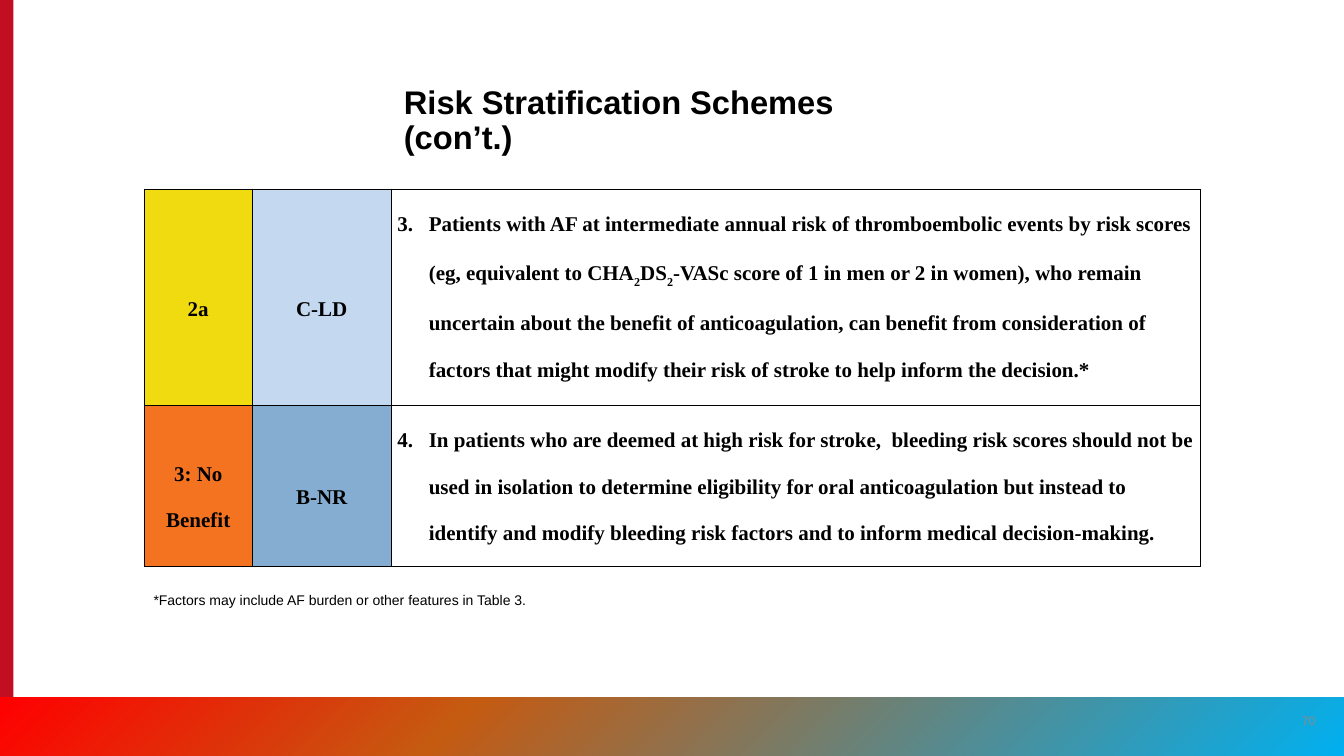
from copy import deepcopy

from pptx import Presentation
from pptx.dml.color import RGBColor
from pptx.enum.shapes import MSO_SHAPE as Shape
from pptx.enum.text import MSO_ANCHOR as Anchor, MSO_AUTO_SIZE as AutoSize, PP_ALIGN as Align
from pptx.oxml.ns import qn
from pptx.oxml.xmlchemy import OxmlElement
from pptx.util import Pt

COLORS = {
    "black": "000000", "gray": "8A8B8A", "crimson": "C10E21",
    "red": "FF0000", "rust": "C55A11", "sky": "00B0F0",
    "yellow": "F0DA10", "pale blue": "C4D9F0",
    "orange": "F37321", "steel blue": "85ADD1",
}
COLUMN_WIDTHS = [92.16, 119.52, 693.36]
ROW_HEIGHTS = [185.76, 137.52]
RECOMMENDATIONS = [
    (("2a", "yellow"), ("C-LD", "pale blue"), 3, [
        ("Patients with AF at intermediate annual risk of thromboembolic events by risk scores "
         "(eg, equivalent to CHA", False),
        ("2", True), ("DS", False), ("2", True),
        ("-VASc score of 1 in men or 2 in women), who remain uncertain about the benefit of "
         "anticoagulation, can benefit from consideration of factors that might modify their "
         "risk of stroke to help inform the decision.*", False),
    ]),
    (("3: No Benefit", "orange"), ("B-NR", "steel blue"), 4, [
        ("In patients who are deemed at high risk for stroke,  bleeding risk scores should not "
         "be used in isolation to determine eligibility for oral anticoagulation but instead to "
         "identify and modify bleeding risk factors and to inform medical decision-making.", False),
    ]),
]


class SlideBuilder:
    heading_font = "Arial"
    table_font = "Times New Roman"

    def __init__(self, presentation):
        self.slide = presentation.slides.add_slide(presentation.slide_layouts[5])

    def color(self, name):
        return RGBColor.from_string(COLORS[name])

    def style(self, paragraph, font, size, color="black", bold=False,
              align=Align.LEFT, spacing=1.0):
        paragraph.alignment = align
        paragraph.line_spacing = spacing
        paragraph.font.name = font
        paragraph.font.size = Pt(size)
        paragraph.font.bold = bold
        paragraph.font.color.rgb = self.color(color)

    def title(self, text, left, top, width, height):
        shape = self.slide.shapes.title
        shape.left, shape.top, shape.width, shape.height = map(Pt, (left, top, width, height))
        frame = shape.text_frame
        frame.text = text
        frame.word_wrap = True
        frame.auto_size = AutoSize.NONE
        frame.vertical_anchor = Anchor.BOTTOM
        self.style(frame.paragraphs[0], self.heading_font, 28, bold=True, spacing=0.9)

    def text(self, text, left, top, width, height, size, color="black",
             anchor=Anchor.TOP, **style):
        shape = self.slide.shapes.add_textbox(*map(Pt, (left, top, width, height)))
        frame = shape.text_frame
        frame.text = text
        frame.word_wrap = True
        frame.vertical_anchor = anchor
        self.style(frame.paragraphs[0], self.heading_font, size, color, **style)

    def rectangle(self, left, top, width, height):
        shape = self.slide.shapes.add_shape(
            Shape.RECTANGLE, *map(Pt, (left, top, width, height)))
        shape.shadow.inherit = False
        shape.line.fill.background()
        return shape

    def solid_bar(self, color, *box):
        fill = self.rectangle(*box).fill
        fill.solid()
        fill.fore_color.rgb = self.color(color)

    def gradient_bar(self, stops, angle, *box):
        shape = self.rectangle(*box)
        fill = shape.fill
        fill.gradient()
        fill.gradient_angle = angle
        stop_list = next(shape._element.iter(qn("a:gsLst")))
        for _ in range(len(stops) - len(stop_list)):
            stop_list.append(deepcopy(stop_list[-1]))
        for stop, (position, color) in zip(fill.gradient_stops, stops):
            stop.position = position
            stop.color.rgb = self.color(color)

    def borders(self, cell):
        properties = cell._tc.get_or_add_tcPr()
        for index, side in enumerate(("a:lnL", "a:lnR", "a:lnT", "a:lnB")):
            line = OxmlElement(side)
            line.set("w", str(Pt(1)))
            solid = OxmlElement("a:solidFill")
            color = OxmlElement("a:srgbClr")
            color.set("val", COLORS["black"])
            solid.append(color)
            line.append(solid)
            properties.insert(index, line)

    def cell(self, cell, runs, fill=None, number=None):
        cell.margin_left = cell.margin_right = Pt(5.04)
        cell.margin_top = cell.margin_bottom = 0
        cell.vertical_anchor = Anchor.MIDDLE if fill else Anchor.TOP
        if fill:
            cell.fill.solid()
            cell.fill.fore_color.rgb = self.color(fill)
        else:
            cell.fill.background()
        self.borders(cell)
        paragraph = cell.text_frame.paragraphs[0]
        if number:
            properties = paragraph._p.get_or_add_pPr()
            properties.set("marL", str(Pt(27)))
            properties.set("indent", str(-Pt(27)))
            bullet = OxmlElement("a:buAutoNum")
            bullet.set("type", "arabicPeriod")
            bullet.set("startAt", str(number))
            properties.append(bullet)
        self.style(paragraph, self.table_font, 18, bold=True, spacing=2.0,
                   align=Align.CENTER if fill else Align.LEFT)
        for text, subscript in runs:
            run = paragraph.add_run()
            run.text = text
            if subscript:
                run.font._element.set("baseline", "-25000")

    def table(self, recommendations, left, top):
        table = self.slide.shapes.add_table(
            len(ROW_HEIGHTS), len(COLUMN_WIDTHS), Pt(left), Pt(top),
            Pt(sum(COLUMN_WIDTHS)), Pt(sum(ROW_HEIGHTS))).table
        table.first_row = table.horz_banding = False
        for column, width in zip(table.columns, COLUMN_WIDTHS):
            column.width = Pt(width)
        for row, height, (strength, evidence, number, runs) in zip(
                table.rows, ROW_HEIGHTS, recommendations):
            row.height = Pt(height)
            for cell, (label, fill) in zip(row.cells, (strength, evidence)):
                self.cell(cell, [(label, False)], fill)
            self.cell(row.cells[2], runs, number=number)


def main():
    presentation = Presentation()
    presentation.slide_width, presentation.slide_height = Pt(1152), Pt(648)
    builder = SlideBuilder(presentation)
    builder.solid_bar("crimson", 0, 0, 11.5, 648)
    builder.gradient_bar([(0, "red"), (0.34, "rust"), (1, "sky")], 315, 0, 597.6, 1152, 50.4)
    builder.title("Risk Stratiﬁcation Schemes (con’t.)", 339, 66, 474, 72)
    builder.text("70", 1104.5, 600.5, 34.5, 34.5, 10.5, "gray", Anchor.MIDDLE, align=Align.CENTER)
    builder.table(RECOMMENDATIONS, 123.84, 162)
    builder.text("*Factors may include AF burden or other features in Table 3.",
                 124.5, 489, 372, 32, 12, spacing=2.0)
    presentation.save("out.pptx")


if __name__ == "__main__":
    main()
